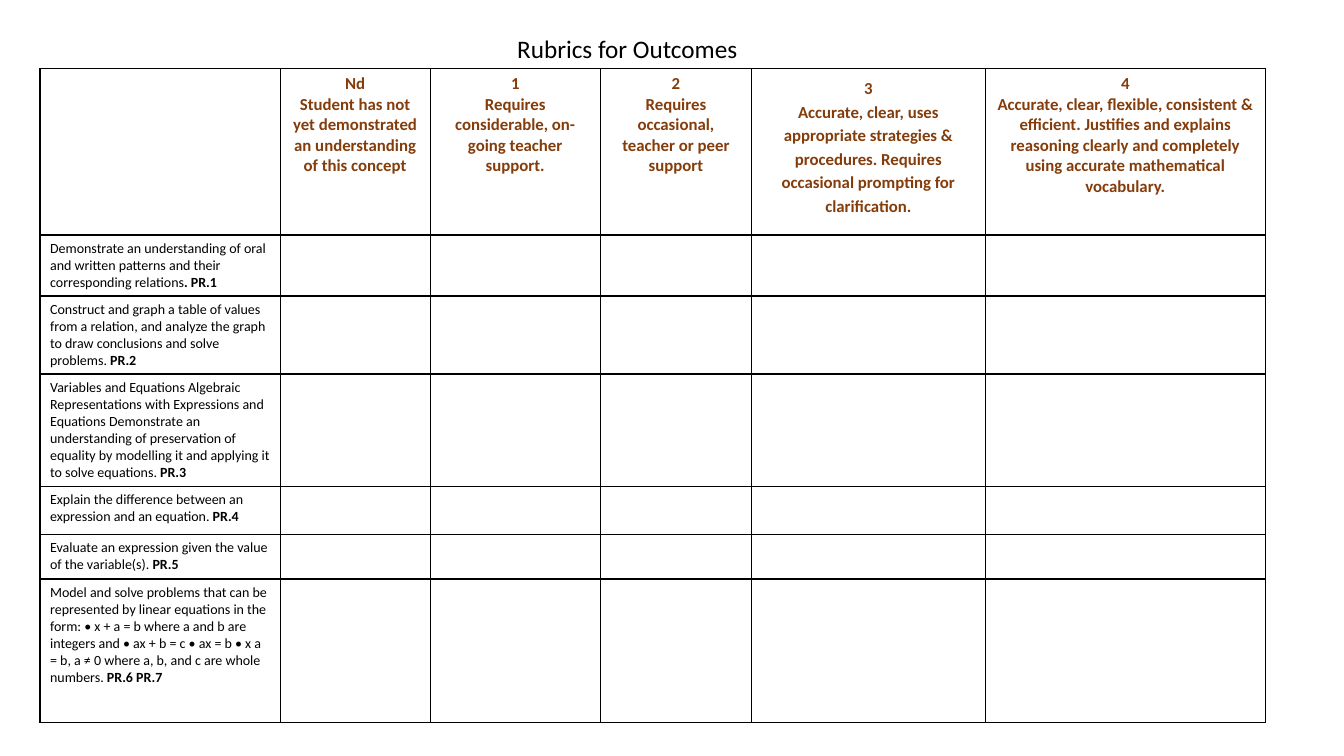
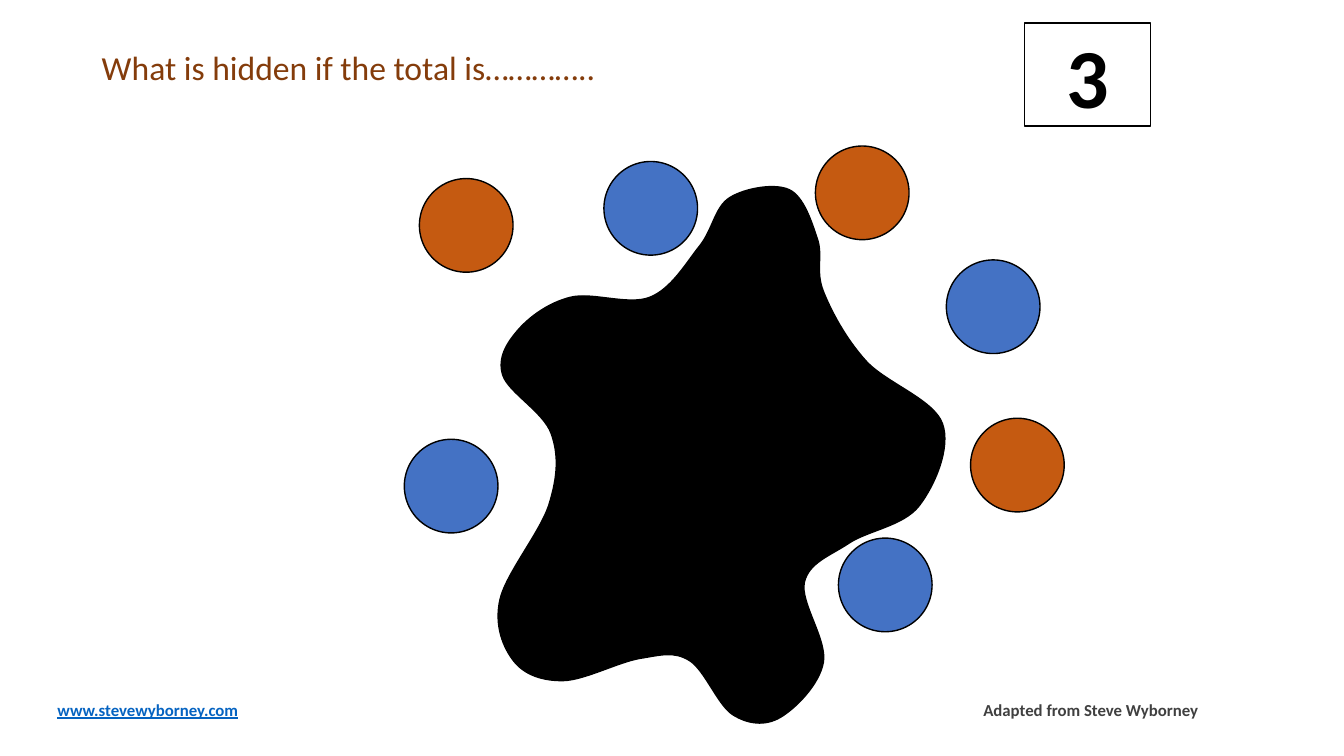
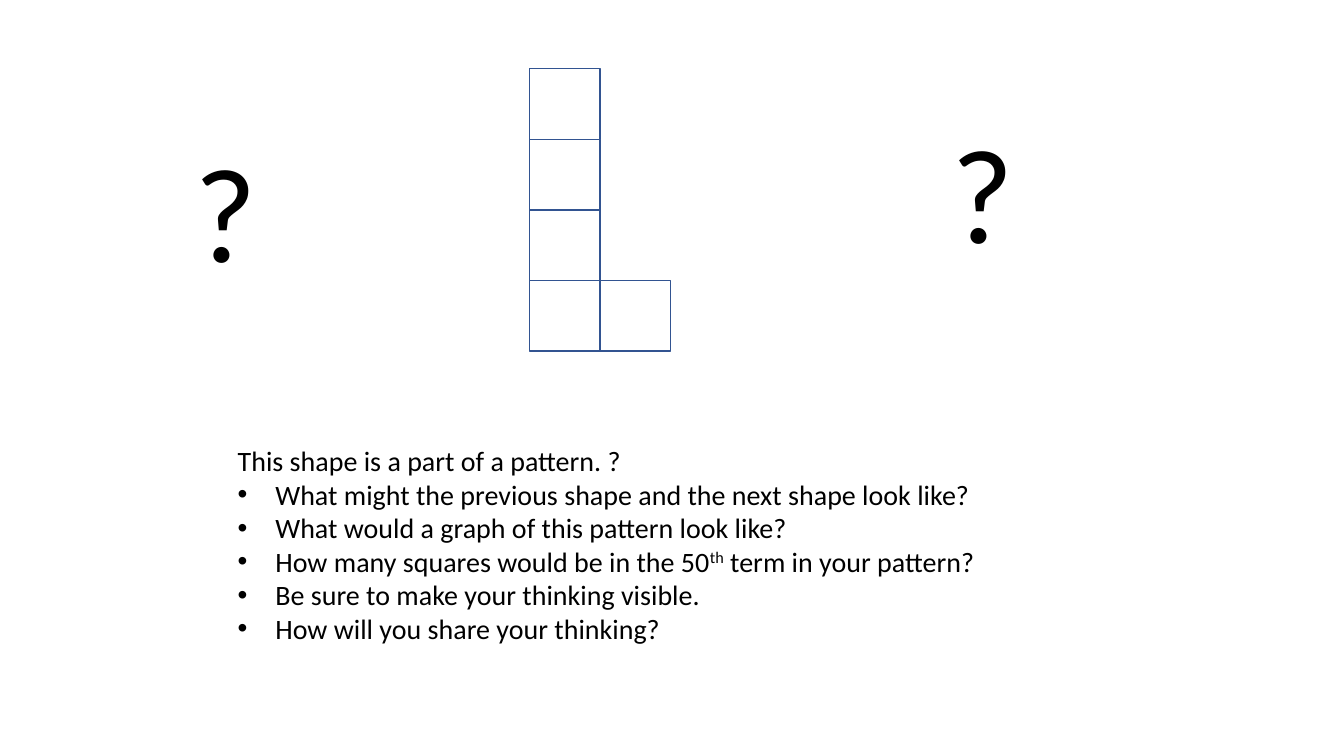
"""Build three maths slides: an outcomes rubric, a hidden counters task and a growing pattern."""
from typing import NamedTuple

from lxml.etree import SubElement
from pptx import Presentation
from pptx.dml.color import RGBColor
from pptx.enum.shapes import MSO_SHAPE
from pptx.enum.text import MSO_ANCHOR, MSO_AUTO_SIZE, PP_ALIGN
from pptx.oxml.ns import qn
from pptx.util import Cm, Pt

FONT = "Calibri"
HUES = {
    "black": "000000", "white": "FFFFFF", "brown": "843C0B", "grey": "404040",
    "link": "0563C1", "orange": "C55A11", "blue": "4472C4", "navy": "325491",
}


class Box(NamedTuple):
    left: float
    top: float
    width: float
    height: float

    def place(self) -> list:
        return [Cm(side) for side in self]


class Run(NamedTuple):
    text: str
    bold: bool = False
    raised: bool = False


class Level(NamedTuple):
    name: str
    text: str
    width: float
    pad: float | None = None
    line: float | None = None


class Goal(NamedTuple):
    text: str
    code: str
    height: float


class Dot(NamedTuple):
    left: float
    top: float
    hue: str


LEVELS = [
    Level("Nd", "Student has not yet demonstrated an understanding of this concept", 3.78),
    Level("1", "Requires considerable, on-going teacher support.", 4.29),
    Level("2", "Requires occasional, teacher or peer support", 3.81),
    Level("3", "Accurate, clear, uses appropriate strategies & procedures. Requires "
          "occasional prompting for clarification.", 5.89, 0.18, 1.15),
    Level("4", "Accurate, clear, flexible, consistent & efficient. Justifies and explains "
          "reasoning clearly and completely using accurate mathematical vocabulary.", 7.06),
]
GOALS = [
    Goal("Demonstrate an understanding of oral and written patterns and their "
         "corresponding relations", ". PR.1", 1.52),
    Goal("Construct and graph a table of values from a relation, and analyze the graph "
         "to draw conclusions and solve problems. ", "PR.2", 1.96),
    Goal("Variables and Equations Algebraic Representations with Expressions and Equations "
         "Demonstrate an understanding of preservation of equality by modelling it and "
         "applying it to solve equations. ", "PR.3", 2.69),
    Goal("Explain the difference between an expression and an equation. ", "PR.4", 1.22),
    Goal("Evaluate an expression given the value of the variable(s). ", "PR.5", 1.12),
    Goal("Model and solve problems that can be represented by linear equations in the form: "
         "• x + a = b where a and b are integers and • ax + b = c • ax = b • x a = b, a ≠ 0 "
         "where a, b, and c are whole numbers. ", "PR.6 PR.7", 3.61),
]
GOAL_WIDTH, HEAD_HEIGHT = 6.05, 4.19
DOTS = [
    Dot(18.31, 10.54, "blue"), Dot(14.25, 12.19, "blue"), Dot(18.24, 6.55, "blue"),
    Dot(14.3, 8.26, "orange"),
    Dot(10.57, 4.5, "orange"), Dot(15.22, 4.07, "blue"), Dot(20.55, 3.68, "orange"),
    Dot(23.85, 6.55, "blue"), Dot(24.46, 10.54, "orange"), Dot(21.13, 13.56, "blue"),
    Dot(10.19, 11.07, "blue"),
]
DOT_SIZE = 2.36
BLOT = [
    (14.2, 17.15), (12.95, 16.66), (12.6, 15.11), (13.84, 12.7), (13.89, 10.92), (12.67, 9.45),
    (13.06, 8.31), (14.38, 7.49), (16.38, 7.49), (17.63, 6.2), (18.39, 4.98), (19.89, 4.78),
    (20.6, 6.02), (20.75, 7.34), (21.82, 9.09), (23.75, 10.67), (23.16, 12.75), (21.39, 13.69),
    (20.27, 14.68), (20.75, 16.69), (19.66, 18.08), (18.47, 18.01), (17.37, 16.64), (16.13, 16.59),
]
TILES = [(0, 0), (0, 1), (1, 3), (0, 3), (0, 2)]
TILE_LEFT, TILE_TOP, TILE_SIZE = 13.34, 1.73, 1.78
ASKS = [
    "This shape is a part of a pattern. ?",
    "What might the previous shape and the next shape look like?",
    "What would a graph of this pattern look like?",
    [Run("How many squares would be in the 50"), Run("th", raised=True),
     Run(" term in your pattern?")],
    "Be sure to make your thinking visible.",
    "How will you share your thinking?",
]


def shade(hue: str) -> RGBColor:
    return RGBColor.from_string(HUES[hue])


def write(frame, *lines, size: float, hue: str = "black", bold: bool = False,
          under: bool = False, align=PP_ALIGN.LEFT, space: float | None = None,
          dots_from: int | None = None) -> None:
    for rank, line in enumerate(lines):
        para = frame.add_paragraph() if rank else frame.paragraphs[0]
        para.alignment = align
        if space:
            para.line_spacing = space
        if dots_from is not None and rank >= dots_from:
            props = para._p.get_or_add_pPr()
            props.set("marL", str(Cm(0.95)))
            props.set("indent", str(-Cm(0.95)))
            SubElement(props, qn("a:buFont"), typeface="Arial")
            SubElement(props, qn("a:buChar"), char="•")
        for part in [Run(line)] if isinstance(line, str) else line:
            run = para.add_run()
            run.text = part.text
            font = run.font
            font.name, font.size = FONT, Pt(size)
            font.bold, font.underline = bold or part.bold, under
            font.color.rgb = shade(hue)
            if part.raised:
                run._r.get_or_add_rPr().set("baseline", "30000")


def add_text(slide, box: Box, *lines, wrap: bool = True, **style) -> None:
    frame = slide.shapes.add_textbox(*box.place()).text_frame
    frame.word_wrap = wrap
    write(frame, *lines, **style)


def set_title(slide, box: Box, text: str, **style) -> None:
    title = slide.shapes.title
    title.left, title.top, title.width, title.height = box.place()
    frame = title.text_frame
    frame.auto_size = MSO_AUTO_SIZE.NONE
    frame.vertical_anchor = MSO_ANCHOR.TOP
    write(frame, text, **style)


def paint(shape, fill: str, edge: str):
    shape.shadow.inherit = False
    shape.fill.solid()
    shape.fill.fore_color.rgb = shade(fill)
    shape.line.color.rgb = shade(edge)
    shape.line.width = Pt(1)
    return shape


def add_form(slide, kind, box: Box, fill: str, edge: str = "black"):
    return paint(slide.shapes.add_shape(kind, *box.place()), fill, edge)


def add_curve(slide, knots: list, fill: str) -> None:
    count = len(knots)
    points = [tuple(Cm(v) for v in knots[0])]
    for i in range(count):
        four = [knots[(i + k) % count] for k in (-1, 0, 1, 2)]
        pulls = [(Cm(b + (c - a) / 6), Cm(c - (d - b) / 6), Cm(c)) for a, b, c, d in zip(*four)]
        points += zip(*pulls)
    draft = slide.shapes.build_freeform(*points[0])
    draft.add_line_segments(points[1:], close=True)
    shape = paint(draft.convert_to_shape(), fill, fill)
    lines = list(shape._element.iter(qn("a:lnTo")))
    for start in range(0, 3 * count, 3):
        curve = lines[start]
        curve.tag = qn("a:cubicBezTo")
        for line in lines[start + 1:start + 3]:
            curve.append(line[0])
            line.getparent().remove(line)


def frame_cell(cell) -> None:
    props = cell._tc.get_or_add_tcPr()
    for side in ("lnL", "lnR", "lnT", "lnB"):
        edge = SubElement(props, qn(f"a:{side}"), w=str(Pt(1)))
        SubElement(SubElement(edge, qn("a:solidFill")), qn("a:srgbClr"), val=HUES["black"])
    cell.fill.solid()
    cell.fill.fore_color.rgb = shade("white")


def draw_rubric(slide) -> None:
    set_title(slide, Box(12.78, 0.71, 16.33, 1.02), "Rubrics for Outcomes", size=18)
    widths = [GOAL_WIDTH] + [level.width for level in LEVELS]
    heights = [HEAD_HEIGHT] + [goal.height for goal in GOALS]
    box = Box(1.01, 1.73, sum(widths), sum(heights))
    table = slide.shapes.add_table(len(heights), len(widths), *box.place()).table
    table.first_row = table.horz_banding = False
    for column, width in zip(table.columns, widths):
        column.width = Cm(width)
    for row, height in zip(table.rows, heights):
        row.height = Cm(height)
    for cell in table.iter_cells():
        frame_cell(cell)
    for col, level in enumerate(LEVELS, 1):
        cell = table.cell(0, col)
        if level.pad:
            cell.margin_left = cell.margin_right = Cm(level.pad)
            cell.margin_top = cell.margin_bottom = Cm(level.pad)
        write(cell.text_frame, level.name, level.text, size=12, hue="brown", bold=True,
              align=PP_ALIGN.CENTER, space=level.line)
    for row, goal in enumerate(GOALS, 1):
        write(table.cell(row, 0).text_frame, [Run(goal.text), Run(goal.code, bold=True)], size=10)


def draw_hidden(slide) -> None:
    set_title(slide, Box(2.31, 1.05, 20.68, 1.27), "What is hidden if the total is…………..",
              size=24, hue="brown")
    card = add_form(slide, MSO_SHAPE.RECTANGLE, Box(25.82, 0.58, 3.18, 2.6), "white")
    card.text_frame.vertical_anchor = MSO_ANCHOR.MIDDLE
    write(card.text_frame, "3", size=60, bold=True, align=PP_ALIGN.CENTER)
    add_text(slide, Box(24.46, 17.5, 5.99, 0.76), "Adapted from Steve Wyborney", wrap=False,
             size=12, hue="grey", bold=True, align=PP_ALIGN.RIGHT)
    add_text(slide, Box(1.2, 17.5, 5.21, 0.76), "www.stevewyborney.com",
             size=12, hue="link", bold=True, under=True)
    for dot in DOTS:
        add_form(slide, MSO_SHAPE.OVAL, Box(dot.left, dot.top, DOT_SIZE, DOT_SIZE), dot.hue)
    add_curve(slide, BLOT, "black")


def draw_pattern(slide) -> None:
    for col, row in TILES:
        box = Box(TILE_LEFT + col * TILE_SIZE, TILE_TOP + row * TILE_SIZE, TILE_SIZE, TILE_SIZE)
        add_form(slide, MSO_SHAPE.RECTANGLE, box, "white", "navy")
    for left, top in ((4.65, 3.1), (23.72, 2.62)):
        add_text(slide, Box(left, top, 2.16, 4.37), "?", size=96)
    add_text(slide, Box(5.74, 11.05, 24.79, 6.15), *ASKS, size=20, dots_from=1)


def main() -> None:
    deck = Presentation()
    deck.slide_width, deck.slide_height = Cm(33.87), Cm(19.05)
    titled, blank = deck.slide_layouts[5], deck.slide_layouts[6]
    for draw, layout in ((draw_rubric, titled), (draw_hidden, titled), (draw_pattern, blank)):
        draw(deck.slides.add_slide(layout))
    deck.save("out.pptx")


if __name__ == "__main__":
    main()
